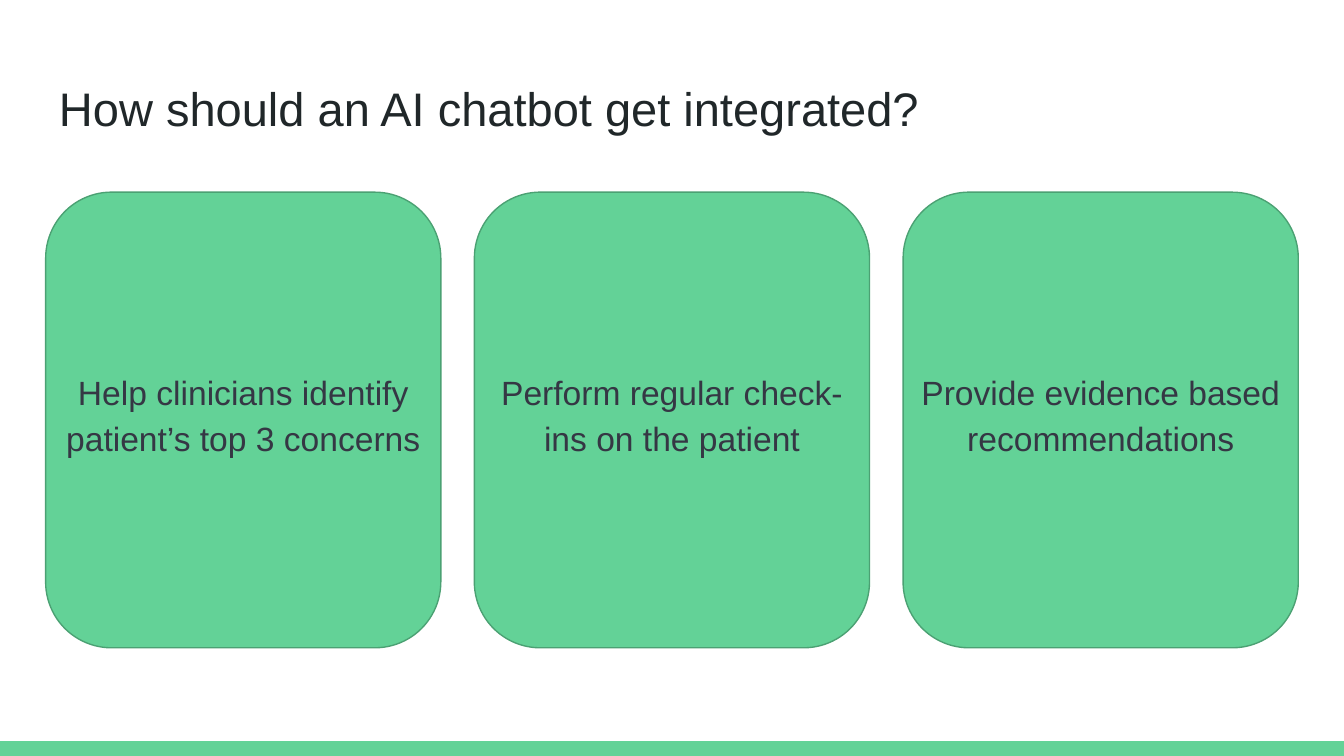
from dataclasses import dataclass

from pptx import Presentation
from pptx.dml.color import RGBColor
from pptx.enum.shapes import MSO_SHAPE as Shape
from pptx.enum.text import MSO_ANCHOR as Anchor, PP_ALIGN as Align
from pptx.util import Inches, Pt


@dataclass(frozen=True)
class Theme:
    font: str = "Arial"
    green: str = "63D297"
    outline: str = "4BA173"
    title_color: str = "202729"
    body_color: str = "353744"
    title_size: float = 25.2
    body_size: float = 18
    outline_width: float = 0.75


THEME = Theme()
SLIDE_WIDTH = 10
SLIDE_HEIGHT = SLIDE_WIDTH * 9 / 16
MARGIN, GAP, INSET = 0.34, 0.25, 0.1
BAR_HEIGHT = 0.11
CARD_TOP, CARD_HEIGHT = 1.43, 3.39
TEXT_HEIGHT = 1.01
CONTENT_WIDTH = SLIDE_WIDTH - 2 * MARGIN

TITLE = "How should an AI chatbot get integrated?"
ROLES = [
    "Help clinicians identify patient’s top 3 concerns",
    "Perform regular check-ins on the patient",
    "Provide evidence based recommendations",
]
BODY_FORMAT = {
    "alignment": Align.CENTER,
    "line_spacing": 1.15,
    "space_after": Pt(12),
}


def apply_format(target, values):
    for name, value in values.items():
        setattr(target, name, value)


def add_block(slide, kind, box, outlined=False):
    shape = slide.shapes.add_shape(kind, *map(Inches, box))
    shape.shadow.inherit = False
    shape.fill.solid()
    shape.fill.fore_color.rgb = RGBColor.from_string(THEME.green)
    if outlined:
        shape.line.color.rgb = RGBColor.from_string(THEME.outline)
        shape.line.width = Pt(THEME.outline_width)
    else:
        shape.line.fill.background()


def add_text(slide, text, box, size, color, paragraph_format):
    frame = slide.shapes.add_textbox(*map(Inches, box)).text_frame
    sides = ("left", "top", "right", "bottom")
    apply_format(frame, {f"margin_{side}": Inches(INSET) for side in sides})
    apply_format(frame, {"word_wrap": True, "vertical_anchor": Anchor.TOP})
    paragraph = frame.paragraphs[0]
    apply_format(paragraph, paragraph_format)
    run = paragraph.add_run()
    run.text = text
    apply_format(run.font, {"name": THEME.font, "size": Pt(size)})
    run.font.color.rgb = RGBColor.from_string(color)


def add_role_cards(slide):
    width = (CONTENT_WIDTH - GAP * (len(ROLES) - 1)) / len(ROLES)
    text_top = CARD_TOP + (CARD_HEIGHT - TEXT_HEIGHT) / 2
    for column, role in enumerate(ROLES):
        left = MARGIN + column * (width + GAP)
        card = (left, CARD_TOP, width, CARD_HEIGHT)
        add_block(slide, Shape.ROUNDED_RECTANGLE, card, outlined=True)
        add_text(slide, role, (left, text_top, width, TEXT_HEIGHT),
                 THEME.body_size, THEME.body_color, BODY_FORMAT)


def main():
    presentation = Presentation()
    presentation.slide_width = Inches(SLIDE_WIDTH)
    presentation.slide_height = Inches(SLIDE_HEIGHT)
    slide = presentation.slides.add_slide(presentation.slide_layouts[6])
    bar = (0, SLIDE_HEIGHT - BAR_HEIGHT, SLIDE_WIDTH, BAR_HEIGHT)
    add_block(slide, Shape.RECTANGLE, bar)
    add_text(slide, TITLE, (MARGIN, 0.49, CONTENT_WIDTH, 0.63),
             THEME.title_size, THEME.title_color, {})
    add_role_cards(slide)
    presentation.save("out.pptx")


if __name__ == "__main__":
    main()
